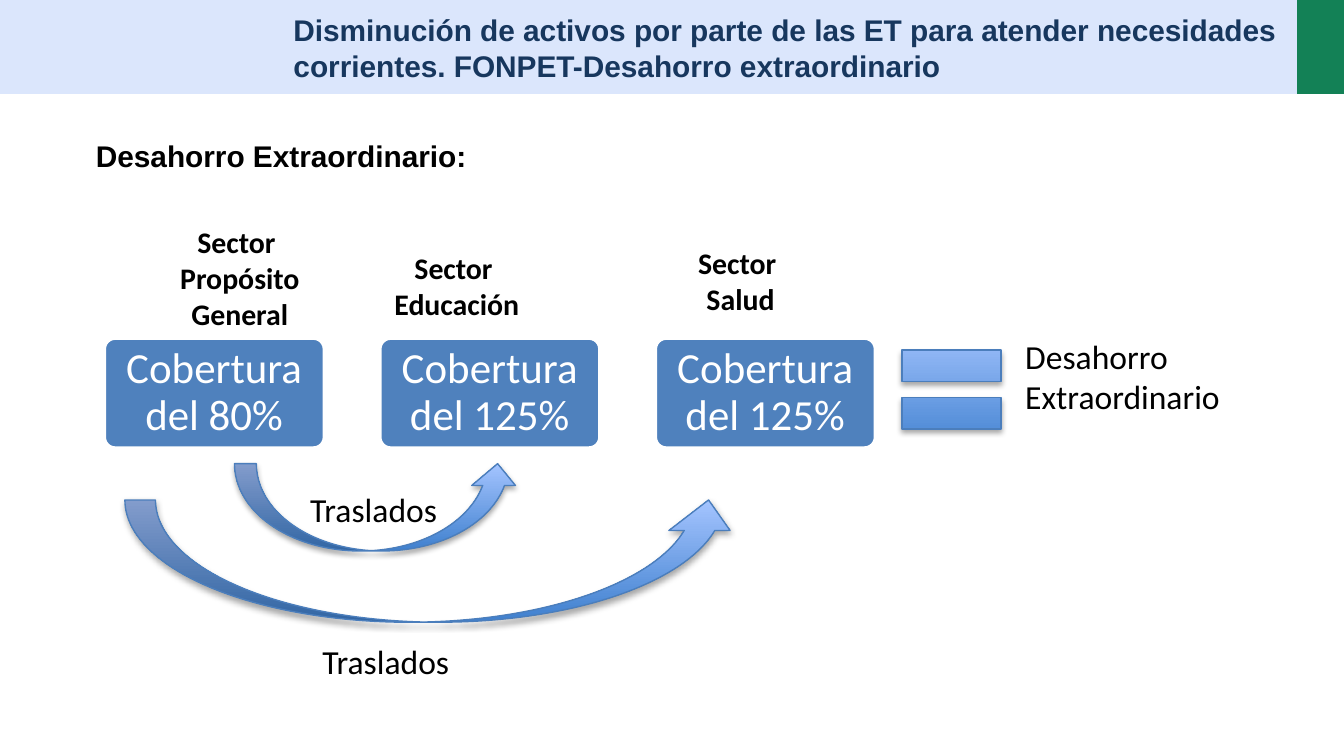
import pptx
import pptx.dml.color
import pptx.enum.shapes
import pptx.enum.text
import pptx.oxml.ns
import pptx.util
from dataclasses import dataclass
from lxml import etree

SHAPES = pptx.enum.shapes.MSO_SHAPE
ALIGN = pptx.enum.text.PP_ALIGN
ANCHOR = pptx.enum.text.MSO_ANCHOR
AUTO_SIZE = pptx.enum.text.MSO_AUTO_SIZE
RGB = pptx.dml.color.RGBColor.from_string

SLIDE_WIDTH = pptx.util.Inches(10)
SLIDE_HEIGHT = SLIDE_WIDTH * 9 // 16
COLUMN = SLIDE_WIDTH / 100
ROW = SLIDE_HEIGHT / 56.25


@dataclass(frozen=True)
class Theme:
    heading_font: str = "Arial"
    body_font: str = "Calibri"
    heading_size: float = 16
    label_size: float = 18
    card_size: float = 23
    black: str = "000000"
    white: str = "FFFFFF"
    navy: str = "17375E"
    band: str = "DBE6FC"
    accent: str = "138156"
    card: str = "4F81BD"
    outline: str = "4B7EBC"
    gradient: tuple = ("3F80CE", "A4C4FF")


THEME = Theme()
TITLE = dict(name=THEME.heading_font, size=THEME.heading_size, bold=True, color=THEME.navy)
SUBTITLE = {**TITLE, "color": THEME.black}
SECTOR = {**SUBTITLE, "name": THEME.body_font}
LABEL = dict(name=THEME.body_font, size=THEME.label_size, bold=False, color=THEME.black)
CARD = {**LABEL, "size": THEME.card_size, "color": THEME.white}


def place(left, top, width, height):
    return [round(value) for value in (left * COLUMN, top * ROW, width * COLUMN, height * ROW)]


def write_text(shape, lines, style, frame_format, paragraph_format):
    frame = shape.text_frame
    for name, value in frame_format.items():
        setattr(frame, name, value)
    frame.text = "\n".join(lines)
    font_format = {**style, "size": pptx.util.Pt(style["size"])}
    color = font_format.pop("color")
    for paragraph in frame.paragraphs:
        for name, value in paragraph_format.items():
            setattr(paragraph, name, value)
        for run in paragraph.runs:
            for name, value in font_format.items():
                setattr(run.font, name, value)
            run.font.color.rgb = RGB(color)


def add_label(slide, area, lines, style, align=ALIGN.LEFT, **frame_format):
    box = slide.shapes.add_textbox(*place(*area))
    settings = {"word_wrap": True, "auto_size": AUTO_SIZE.SHAPE_TO_FIT_TEXT, **frame_format}
    write_text(box, lines, style, settings, {"alignment": align})


def add_block(slide, kind, area, fill):
    shape = slide.shapes.add_shape(kind, *place(*area))
    shape.shadow.inherit = False
    shape.fill.solid()
    shape.fill.fore_color.rgb = RGB(fill)
    shape.line.fill.background()
    return shape


def add_card(slide, area, text):
    card = add_block(slide, SHAPES.ROUNDED_RECTANGLE, area, THEME.card)
    card.adjustments[0] = 0.1
    card.line.color.rgb = RGB(THEME.white)
    card.line.width = pptx.util.Pt(2)
    side, edge = round(0.5 * COLUMN), round(0.3 * ROW)
    frame_format = dict(
        word_wrap=True, vertical_anchor=ANCHOR.MIDDLE,
        margin_left=side, margin_right=side, margin_top=edge, margin_bottom=edge,
    )
    write_text(card, [text], CARD, frame_format, {"alignment": ALIGN.CENTER, "line_spacing": 0.9})


def add_symbol(slide, kind, area):
    symbol = add_block(slide, kind, area, THEME.card)
    symbol.fill.gradient()
    symbol.fill.gradient_angle = 90
    for stop, position, color in zip(symbol.fill.gradient_stops, (0, 1), THEME.gradient):
        stop.position = position
        stop.color.rgb = RGB(color)
    symbol.line.color.rgb = RGB(THEME.outline)
    symbol.line.width = pptx.util.Pt(0.75)
    add_shadow(symbol)


def add_shadow(shape):
    qn = pptx.oxml.ns.qn
    effects = shape.element.spPr.find(qn("a:effectLst"))
    shadow = etree.SubElement(
        effects, qn("a:outerShdw"), blurRad=str(pptx.util.Pt(3.1)),
        dist=str(pptx.util.Pt(1.8)), dir="5400000", rotWithShape="0",
    )
    color = etree.SubElement(shadow, qn("a:srgbClr"), val=THEME.black)
    etree.SubElement(color, qn("a:alpha"), val="35000")


def add_header(slide):
    add_block(slide, SHAPES.RECTANGLE, (96.5, 0, 3.5, 7), THEME.accent)
    add_block(slide, SHAPES.RECTANGLE, (0, 0, 96.5, 7), THEME.band)
    title = (
        "Disminución de activos por parte de las ET para atender necesidades "
        "corrientes. FONPET-Desahorro extraordinario"
    )
    add_label(slide, (20.85, 0.4, 76.5, 6.4), [title], TITLE)
    add_label(slide, (6.15, 8, 71.8, 7.1), ["Desahorro Extraordinario:"], SUBTITLE,
              auto_size=AUTO_SIZE.NONE, vertical_anchor=ANCHOR.MIDDLE)


def add_sectors(slide):
    sectors = [
        ("Propósito General", "80%", (9.35, 16.15, 17, 9.1), True),
        ("Educación", "125%", (28.3, 18.1, 11.4, 6.4), False),
        ("Salud", "125%", (50.9, 17.7, 8.4, 6.4), False),
    ]
    for index, (name, coverage, area, wrap) in enumerate(sectors):
        add_card(slide, (7.75 + 20.5 * index, 25.15, 16.4, 8.2), f"Cobertura del {coverage}")
        add_label(slide, area, ["Sector ", name], SECTOR, ALIGN.CENTER, word_wrap=wrap)


def add_transfers(slide):
    add_label(slide, (75.3, 24.5, 18.5, 7.1), ["Desahorro Extraordinario"], LABEL)
    add_symbol(slide, SHAPES.MATH_EQUAL, (65.8, 24, 10, 10))
    for area in ((9.3, 37.2, 45.7, 9.1), (17.45, 34.5, 21.2, 6.5)):
        add_symbol(slide, SHAPES.CURVED_UP_ARROW, area)
    for left, top in ((22.1, 35.9), (23, 47.2)):
        add_label(slide, (left, top, 18.4, 4), ["Traslados"], LABEL)


def main():
    presentation = pptx.Presentation()
    presentation.slide_width = SLIDE_WIDTH
    presentation.slide_height = SLIDE_HEIGHT
    slide = presentation.slides.add_slide(presentation.slide_layouts[6])
    add_header(slide)
    add_sectors(slide)
    add_transfers(slide)
    presentation.save("out.pptx")


if __name__ == "__main__":
    main()
